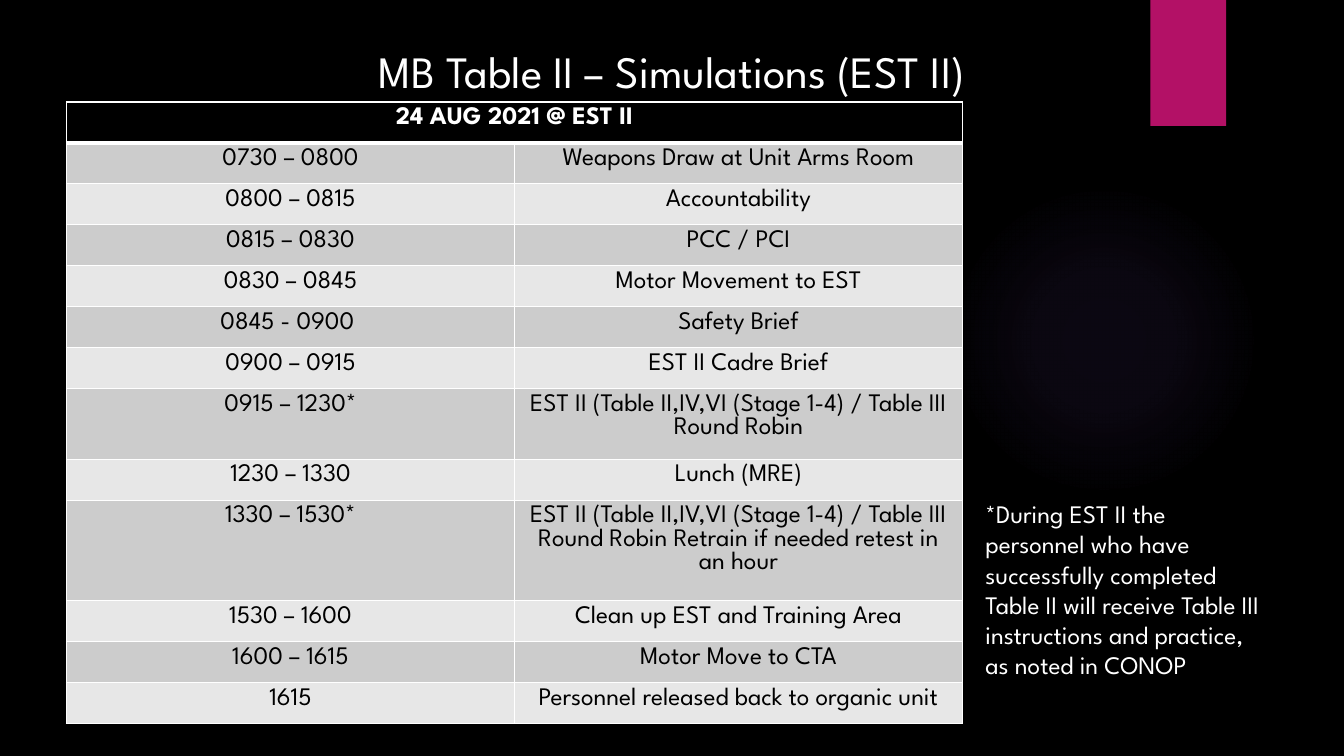
from lxml import etree
from pptx import Presentation
from pptx.dml.color import RGBColor
from pptx.enum import shapes, text
from pptx.oxml import ns
from pptx.util import Pt

BLACK = RGBColor(0x00, 0x00, 0x00)
WHITE = RGBColor(0xFF, 0xFF, 0xFF)
MAGENTA = RGBColor(0xB3, 0x11, 0x66)
DARK_GREY = RGBColor(0xCC, 0xCC, 0xCC)
LIGHT_GREY = RGBColor(0xE7, 0xE7, 0xE7)
VIOLET = RGBColor(0x9B, 0x6B, 0xF2)
FONT = "League Spartan"
ROW_HEIGHT = 29.25
EXTRA_LINE = 21.3

SCHEDULE = [
    ("0730 – 0800", "Weapons Draw at Unit Arms Room", 1),
    ("0800 – 0815", "Accountability", 1),
    ("0815 – 0830", "PCC / PCI", 1),
    ("0830 – 0845", "Motor Movement to EST", 1),
    ("0845 - 0900 ", "Safety Brief", 1),
    ("0900 – 0915", "EST II Cadre Brief", 1),
    ("0915 – 1230*", "EST II (Table II,IV,VI (Stage 1-4) / Table III Round Robin", 2),
    ("1230 – 1330", "Lunch (MRE)", 1),
    ("1330 – 1530*", "EST II (Table II,IV,VI (Stage 1-4) / Table III "
     "Round Robin Retrain if needed retest in an hour", 3),
    ("1530 – 1600", "Clean up EST and Training Area", 1),
    ("1600 – 1615", "Motor Move to CTA", 1),
    ("1615", "Personnel released back to organic unit", 1),
]


def write(frame, words, size, color, align, bold=False):
    frame.text = words
    para = frame.paragraphs[0]
    para.alignment = align
    para.font.name = FONT
    para.font.size = Pt(size)
    para.font.bold = bold
    para.font.color.rgb = color


def fill_cell(cell, words, background, color, bold=False, bottom=1):
    write(cell.text_frame, words, 18, color, text.PP_ALIGN.CENTER, bold)
    properties = cell._tc.get_or_add_tcPr()
    for side, width in (("L", 1), ("R", 1), ("T", 1), ("B", bottom)):
        border = etree.SubElement(properties, ns.qn(f"a:ln{side}"), w=str(Pt(width)))
        solid = etree.SubElement(border, ns.qn("a:solidFill"))
        etree.SubElement(solid, ns.qn("a:srgbClr"), val=str(WHITE))
    cell.fill.solid()
    cell.fill.fore_color.rgb = background


deck = Presentation()
deck.slide_width, deck.slide_height = Pt(960), Pt(540)
page = deck.slides.add_slide(deck.slide_layouts[5])
page.background.fill.solid()
page.background.fill.fore_color.rgb = BLACK

glow = page.shapes.add_shape(shapes.MSO_SHAPE.OVAL, Pt(677.5), Pt(131.8), Pt(221.8), Pt(221.8))
glow.shadow.inherit = False
glow.line.fill.background()
glow.fill.gradient()
gradient = glow._element.spPr.find(ns.qn("a:gradFill"))
for child in list(gradient):
    gradient.remove(child)
stops = etree.SubElement(gradient, ns.qn("a:gsLst"))
for position, alpha in ((0, 7), (36, 6), (69, 0)):
    stop = etree.SubElement(stops, ns.qn("a:gs"), pos=str(position * 1000))
    tint = etree.SubElement(stop, ns.qn("a:srgbClr"), val=str(VIOLET))
    etree.SubElement(tint, ns.qn("a:alpha"), val=str(alpha * 1000))
circle = etree.SubElement(gradient, ns.qn("a:path"), path="circle")
etree.SubElement(circle, ns.qn("a:fillToRect"), l="50000", t="50000", r="50000", b="50000")

ribbon = page.shapes.add_shape(shapes.MSO_SHAPE.RECTANGLE, Pt(821.8), Pt(0), Pt(54), Pt(90))
ribbon.shadow.inherit = False
ribbon.fill.solid()
ribbon.fill.fore_color.rgb = MAGENTA
ribbon.line.fill.background()

title = page.shapes.title
title.left, title.top, title.width, title.height = Pt(256.3), Pt(27.7), Pt(448), Pt(46)
title.text_frame.word_wrap = False
title.text_frame.vertical_anchor = text.MSO_ANCHOR.TOP
write(title.text_frame, "MB Table II – Simulations (EST II)", 32, WHITE, text.PP_ALIGN.CENTER)

table = page.shapes.add_table(len(SCHEDULE) + 1, 2, Pt(47.5), Pt(72.9), Pt(640), Pt(444)).table
table.cell(0, 0).merge(table.cell(0, 1))
table.rows[0].height = Pt(ROW_HEIGHT)
for cell in table.rows[0].cells:
    words = "24 AUG 2021 @ EST II" if cell.is_merge_origin else ""
    fill_cell(cell, words, BLACK, WHITE, bold=True, bottom=3)
for number, (time, activity, lines) in enumerate(SCHEDULE, 1):
    table.rows[number].height = Pt(ROW_HEIGHT + EXTRA_LINE * (lines - 1))
    background = DARK_GREY if number % 2 else LIGHT_GREY
    for column, words in enumerate((time, activity)):
        fill_cell(table.cell(number, column), words, background, BLACK)

note = page.shapes.add_textbox(Pt(696.8), Pt(352.4), Pt(215.3), Pt(142.6))
note.text_frame.word_wrap = True
write(note.text_frame, "*During EST II the personnel who have successfully completed Table II "
      "will receive Table III instructions and practice, as noted in CONOP",
      18, WHITE, text.PP_ALIGN.LEFT)

deck.save("out.pptx")
